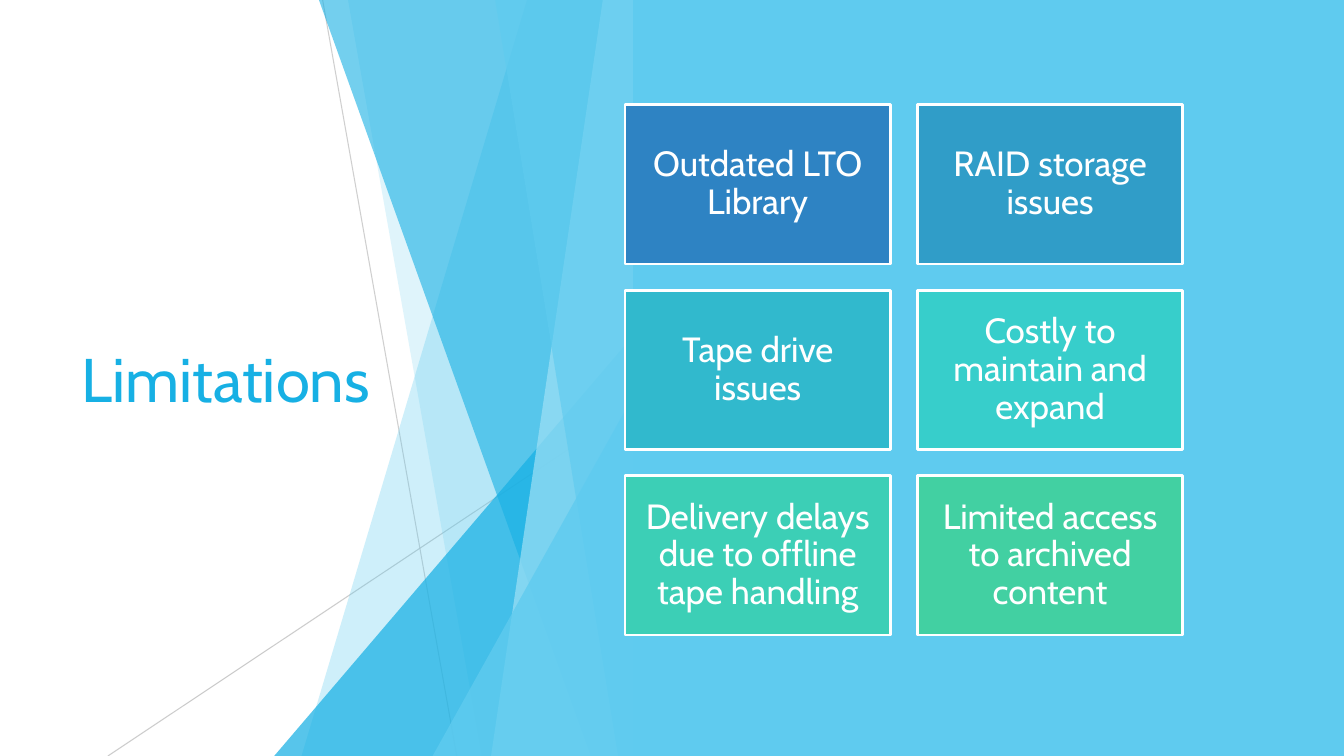
from dataclasses import dataclass
import lxml.etree
import pptx
import pptx.dml.color
import pptx.enum.shapes
import pptx.enum.text
import pptx.oxml.ns
import pptx.util

Inches = pptx.util.Inches
Pt = pptx.util.Pt
RGB = pptx.dml.color.RGBColor.from_string
SHAPE = pptx.enum.shapes.MSO_SHAPE
ALIGN = pptx.enum.text.PP_ALIGN
MIDDLE = pptx.enum.text.MSO_ANCHOR.MIDDLE


@dataclass(frozen=True)
class Theme:
    font: str = "Cabin"
    title_size: float = 44
    card_size: float = 25
    accent: str = "17B0E4"
    sky: str = "5FCBEF"
    pale: str = "9FE0F5"
    hairline: str = "BFBFBF"
    white: str = "FFFFFF"


@dataclass(frozen=True)
class Hairline:
    start: tuple[float, float]
    end: tuple[float, float]
    opacity: int


@dataclass(frozen=True)
class Band:
    """Sloping left edge from top to bottom, straight right edge."""
    top: float
    bottom: float
    color: str
    opacity: int


@dataclass(frozen=True)
class Wedge:
    """Right triangle standing on the slide's bottom edge."""
    left: float
    top: float
    color: str
    opacity: int


@dataclass(frozen=True)
class Card:
    text: str
    color: str


THEME = Theme()
WIDTH, HEIGHT = 13.33, 7.5
PANEL_LEFT = 6.28
BLEED = -0.01

HAIRLINES = [
    Hairline((3.2, 0), (4.53, HEIGHT), 75),
    Hairline((PANEL_LEFT, 4.03), (1.07, HEIGHT), 80),
]
FACETS = [
    Band(5.23, 2.99, THEME.sky, 30),
    Band(3.45, 4.78, THEME.sky, 20),
    Wedge(2.72, 3.33, THEME.accent, 72),
    Band(3.16, 5.86, THEME.accent, 60),
    Band(5.98, 4.87, THEME.pale, 70),
    Band(4.91, 6.13, THEME.sky, 65),
    Wedge(4.29, 3.93, THEME.sky, 80),
]
CARDS = [
    Card("Outdated LTO Library", "2E83C3"),
    Card("RAID storage issues", "309DC8"),
    Card("Tape drive issues", "31B9CD"),
    Card("Costly to maintain and expand", "37CECB"),
    Card("Delivery delays due to offline tape handling", "3CCFB6"),
    Card("Limited access to archived content", "42D0A2"),
]
COLUMNS = 2
CARD_LEFT, CARD_TOP = 6.2, 1.04
CARD_WIDTH, CARD_HEIGHT = 2.63, 1.58
COLUMN_STEP, ROW_STEP = 2.9, 1.84


def apply(target, formats: dict) -> None:
    for name, value in formats.items():
        setattr(target, name, value)


def set_opacity(sp, percent: int) -> None:
    color = sp._element.spPr.find(".//" + pptx.oxml.ns.qn("a:srgbClr"))
    alpha = lxml.etree.SubElement(color, pptx.oxml.ns.qn("a:alpha"))
    alpha.set("val", str(percent * 1000))


def paint(sp, color: str) -> None:
    sp.shadow.inherit = False
    sp.fill.solid()
    sp.fill.fore_color.rgb = RGB(color)
    sp.line.fill.background()


def write(sp, text: str, size: float, color: str, frame: dict, para: dict) -> None:
    tf = sp.text_frame
    apply(tf, {"word_wrap": True, "vertical_anchor": MIDDLE} | frame)
    p = tf.paragraphs[0]
    apply(p, para)
    r = p.add_run()
    r.text = text
    apply(r.font, {"name": THEME.font, "size": Pt(size)})
    r.font.color.rgb = RGB(color)


def draw_hairline(shapes, line: Hairline) -> None:
    cx = shapes.add_connector(pptx.enum.shapes.MSO_CONNECTOR.STRAIGHT,
                              *map(Inches, line.start + line.end))
    cx.line.width = Pt(0.75)
    cx.line.color.rgb = RGB(THEME.hairline)
    set_opacity(cx, line.opacity)
    lxml.etree.SubElement(cx._element.spPr, pptx.oxml.ns.qn("a:effectLst"))


def draw_facet(shapes, facet: Band | Wedge) -> None:
    if isinstance(facet, Wedge):
        box = (facet.left, facet.top, PANEL_LEFT - facet.left, HEIGHT - facet.top)
        sp = shapes.add_shape(SHAPE.ISOSCELES_TRIANGLE, *map(Inches, box))
        sp.adjustments[0] = 1
    else:
        corners = [(PANEL_LEFT, BLEED), (PANEL_LEFT, HEIGHT), (facet.bottom, HEIGHT)]
        fb = shapes.build_freeform(Inches(facet.top), Inches(BLEED))
        fb.add_line_segments([(Inches(x), Inches(y)) for x, y in corners], close=True)
        sp = fb.convert_to_shape()
    paint(sp, facet.color)
    set_opacity(sp, facet.opacity)


def draw_card(shapes, card: Card, index: int) -> None:
    row, column = divmod(index, COLUMNS)
    box = (CARD_LEFT + column * COLUMN_STEP, CARD_TOP + row * ROW_STEP,
           CARD_WIDTH, CARD_HEIGHT)
    sp = shapes.add_shape(SHAPE.RECTANGLE, *map(Inches, box))
    paint(sp, card.color)
    sp.line.color.rgb = RGB(THEME.white)
    sp.line.width = Pt(2)
    margins = {f"margin_{side}": Inches(0.1)
               for side in ("left", "top", "right", "bottom")}
    write(sp, card.text, THEME.card_size, THEME.white, margins,
          {"alignment": ALIGN.CENTER, "line_spacing": 0.9})


def main() -> None:
    prs = pptx.Presentation()
    apply(prs, {"slide_width": Inches(WIDTH), "slide_height": Inches(HEIGHT)})
    shapes = prs.slides.add_slide(prs.slide_layouts[6]).shapes

    # Faceted backdrop
    for line in HAIRLINES:
        draw_hairline(shapes, line)
    for facet in FACETS:
        draw_facet(shapes, facet)

    # Title
    title = shapes.add_textbox(*map(Inches, (0.71, 1.51, 3.88, 4.48)))
    write(title, "Limitations", THEME.title_size, THEME.accent, {},
          {"alignment": ALIGN.LEFT})

    # Right panel with the grid of cards
    panel = shapes.add_shape(SHAPE.RECTANGLE, Inches(PANEL_LEFT), 0,
                             Inches(WIDTH - PANEL_LEFT), Inches(HEIGHT))
    paint(panel, THEME.sky)
    for index, card in enumerate(CARDS):
        draw_card(shapes, card, index)

    prs.save("out.pptx")


if __name__ == "__main__":
    main()
